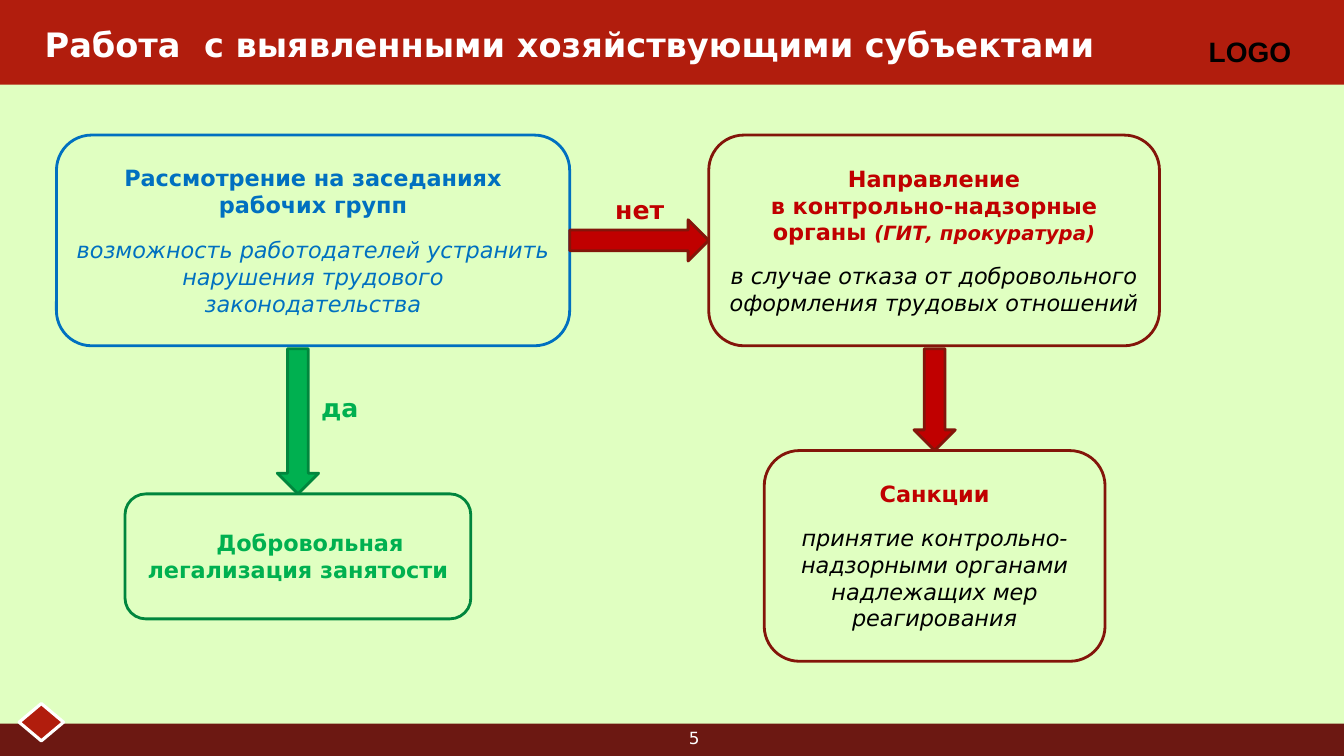
from pptx import Presentation
from pptx.dml.color import RGBColor
from pptx.enum.shapes import MSO_SHAPE as Preset
from pptx.enum.text import MSO_ANCHOR as Anchor, PP_ALIGN as Align
from pptx.util import Inches, Pt

FONT = "DejaVu Sans"
BLUE, RED, GREEN, BLACK, WHITE = "0070C0", "C00000", "00B050", "000000", "FFFFFF"
DARK_RED, DARK_GREEN, BRICK = "83150A", "00863D", "B11D0D"
BOLD, ITALIC, BOLD_ITALIC = (True, False), (False, True), (True, True)

TITLE = "Работа  с выявленными хозяйствующими субъектами"

BANDS = [
    (Preset.RECTANGLE, (0, 0, 13.33, 0.84), BRICK, None),
    (Preset.RECTANGLE, (0, 7.18, 13.33, 0.33), "6C1812", None),
    (Preset.DIAMOND, (0.19, 6.98, 0.44, 0.37), BRICK, WHITE),
]

REVIEW = (0.56, 1.34, 5.09, 2.09)
REFERRAL = (7.03, 1.34, 4.47, 2.09)
LEGALIZATION = (1.24, 4.9, 3.43, 1.24)
SANCTIONS = (7.58, 4.47, 3.38, 2.09)

BOXES = [
    (REVIEW, BLUE, 13, 0, [
        [("Рассмотрение на заседаниях рабочих групп", 16, BLUE, BOLD)],
        [("возможность работодателей устранить нарушения трудового законодательства",
          16, BLUE, ITALIC)],
    ]),
    (REFERRAL, DARK_RED, 12, 0, [
        [("Направление\nв контрольно-надзорные\nорганы ", 16, RED, BOLD),
         ("(ГИТ, прокуратура)", 14, RED, BOLD_ITALIC)],
        [("в случае отказа от добровольного оформления трудовых отношений",
          16, BLACK, ITALIC)],
    ]),
    (LEGALIZATION, DARK_GREEN, 0, 0.24, [
        [("Добровольная легализация занятости", 16, GREEN, BOLD)],
    ]),
    (SANCTIONS, DARK_RED, 12, 0, [
        [("Санкции", 16, RED, BOLD)],
        [("принятие контрольно-надзорными органами надлежащих мер реагирования",
          16, BLACK, ITALIC)],
    ]),
]

DOWN_ARROWS = [
    (REFERRAL, SANCTIONS, RED, DARK_RED),
    (REVIEW, LEGALIZATION, GREEN, DARK_GREEN),
]
ARROW_WIDTH = 0.41

LABELS = [
    ((11.89, 0.29, 1.44, 0.44), "LOGO", 20, BLACK, True, "Arial", Align.LEFT),
    ((5.33, 7.17, 3.11, 0.26), "5", 12, WHITE, False, FONT, Align.CENTER),
    ((5.92, 1.88, 0.85, 0.4), "нет", 18, RED, True, FONT, Align.CENTER),
    ((3.07, 3.84, 0.6, 0.4), "да", 18, GREEN, True, FONT, Align.CENTER),
]


def color(value):
    return RGBColor.from_string(value)


def add_run(paragraph, text, size, fill, style, name=FONT):
    for index, line in enumerate(text.split("\n")):
        if index:
            paragraph.add_line_break()
        run = paragraph.add_run()
        run.text = line
        run.font.name = name
        run.font.size = Pt(size)
        run.font.bold, run.font.italic = style
        run.font.color.rgb = color(fill)


def add_shape(slide, preset, place, fill=None, line=None, width=2):
    shape = slide.shapes.add_shape(preset, *map(Inches, place))
    shape.shadow.inherit = False
    if fill:
        shape.fill.solid()
        shape.fill.fore_color.rgb = color(fill)
    else:
        shape.fill.background()
    if line:
        shape.line.color.rgb = color(line)
        shape.line.width = Pt(width)
    else:
        shape.line.fill.background()
    return shape


def add_title(slide):
    title = slide.shapes.title
    title.left, title.top, title.width, title.height = map(Inches, (0, 0.13, 11.3, 0.62))
    title.text_frame.vertical_anchor = Anchor.MIDDLE
    paragraph = title.text_frame.paragraphs[0]
    paragraph.alignment = Align.CENTER
    add_run(paragraph, TITLE, 24, WHITE, BOLD)
    for preset, place, fill, line in BANDS:
        band = add_shape(slide, preset, place, fill, line, 2.25)
        title.element.addprevious(band.element)


def add_box(slide, place, line, gap, indent, paragraphs):
    frame = add_shape(slide, Preset.ROUNDED_RECTANGLE, place, line=line).text_frame
    frame.word_wrap = True
    frame.vertical_anchor = Anchor.MIDDLE
    for index, runs in enumerate(paragraphs):
        paragraph = frame.add_paragraph() if index else frame.paragraphs[0]
        paragraph.alignment = Align.CENTER
        if index:
            paragraph.space_before = Pt(gap)
        if indent:
            properties = paragraph._p.get_or_add_pPr()
            properties.set("marL", "0")
            properties.set("indent", str(Inches(indent)))
        for run in runs:
            add_run(paragraph, *run)


def add_arrows(slide):
    left, top, width, height = REVIEW
    start = left + width
    place = (start, top + (height - ARROW_WIDTH) / 2, REFERRAL[0] - start, ARROW_WIDTH)
    add_shape(slide, Preset.RIGHT_ARROW, place, RED, DARK_RED)
    for source, target, fill, line in DOWN_ARROWS:
        start = source[1] + source[3] + 0.03
        middle = target[0] + target[2] / 2
        place = (middle - ARROW_WIDTH / 2, start, ARROW_WIDTH, target[1] - start)
        add_shape(slide, Preset.DOWN_ARROW, place, fill, line)


def add_label(slide, place, text, size, fill, bold, name, alignment):
    frame = slide.shapes.add_textbox(*map(Inches, place)).text_frame
    frame.word_wrap = True
    frame.paragraphs[0].alignment = alignment
    add_run(frame.paragraphs[0], text, size, fill, (bold, False), name)


def main():
    presentation = Presentation()
    presentation.slide_width = Inches(13.33)
    presentation.slide_height = Inches(7.5)
    slide = presentation.slides.add_slide(presentation.slide_layouts[5])
    slide.background.fill.solid()
    slide.background.fill.fore_color.rgb = color("E0FFC1")
    add_title(slide)
    for box in BOXES:
        add_box(slide, *box)
    add_arrows(slide)
    for label in LABELS:
        add_label(slide, *label)
    presentation.save("out.pptx")


if __name__ == "__main__":
    main()
